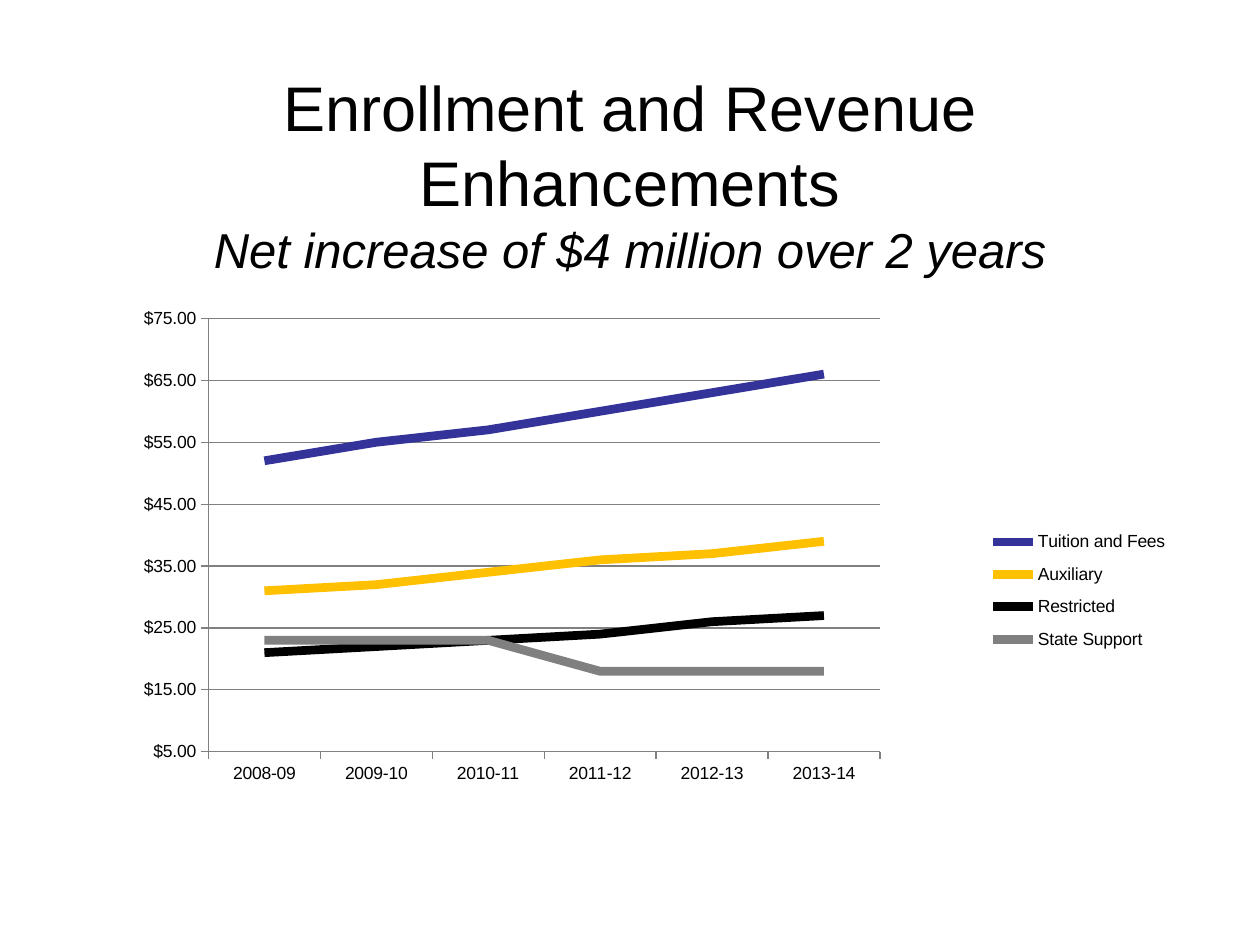
from lxml.etree import fromstring
from pptx import Presentation
from pptx.chart.data import CategoryChartData
from pptx.dml.color import RGBColor
from pptx.enum.chart import XL_CHART_TYPE, XL_LEGEND_POSITION, XL_MARKER_STYLE, XL_TICK_MARK
from pptx.enum.text import MSO_ANCHOR, PP_ALIGN
from pptx.oxml.ns import nsdecls
from pptx.util import Cm, Pt

# Content
TITLE = "Enrollment and Revenue Enhancements"
SUBTITLE = "Net increase of $4 million over 2 years"
YEARS = ["2008-09", "2009-10", "2010-11", "2011-12", "2012-13", "2013-14"]
REVENUE = [
    ("Tuition and Fees", "blue", (52, 55, 57, 60, 63, 66)),
    ("Auxiliary", "gold", (31, 32, 34, 36, 37, 39)),
    ("Restricted", "black", (21, 22, 23, 24, 26, 27)),
    ("State Support", "gray", (23, 23, 23, 18, 18, 18)),
]
COLORS = {"blue": "333399", "gold": "FFC000", "black": "000000", "gray": "808080"}
FONT = "Arial"
PLOT_AREA = (0.098, 0.056, 0.576, 0.699)
LEGEND_AREA = (0.74, 0.38, 0.21, 0.23)


def color(name):
    return RGBColor.from_string(COLORS[name])


def add_run(p, text, size, italic=False):
    r = p.add_run()
    r.text = text
    r.font.name, r.font.size, r.font.italic = FONT, Pt(size), italic
    r.font.color.rgb = color("black")


def layout(area, inner=False):
    target = '<c:layoutTarget val="inner"/>' if inner else ""
    modes = '<c:xMode val="edge"/><c:yMode val="edge"/>'
    sizes = "".join(f'<c:{k} val="{v}"/>' for k, v in zip("xywh", area))
    return fromstring(f'<c:layout {nsdecls("c")}><c:manualLayout>{target}{modes}{sizes}'
                      "</c:manualLayout></c:layout>")


prs = Presentation()
prs.slide_width, prs.slide_height = Cm(25.4), Cm(19.05)
s = prs.slides.add_slide(prs.slide_layouts[6])

# Title
tf = s.shapes.add_textbox(Cm(1.9), Cm(2.75), Cm(21.6), Cm(1.48)).text_frame
tf.word_wrap = True
tf.vertical_anchor = MSO_ANCHOR.MIDDLE
p = tf.paragraphs[0]
p.alignment = PP_ALIGN.CENTER
add_run(p, TITLE, 36)
p.add_line_break()
add_run(p, SUBTITLE, 28, italic=True)

# Line chart
data = CategoryChartData(number_format='"$"#,##0.00')
data.categories = YEARS
for name, _, values in REVENUE:
    data.add_series(name, values)
chart = s.shapes.add_chart(XL_CHART_TYPE.LINE, Cm(1.9), Cm(5.72), Cm(23.5), Cm(12.5), data).chart
chart.has_title = False
chart.font.name, chart.font.size = FONT, Pt(10)
chart.font.color.rgb = color("black")

plot = chart.plots[0]
plot.vary_by_categories = False
for series, (_, key, _) in zip(plot.series, REVENUE):
    series.smooth = False
    series.marker.style = XL_MARKER_STYLE.NONE
    series.format.line.width = Pt(5)
    series.format.line.color.rgb = color(key)

# Axes
years, dollars = chart.category_axis, chart.value_axis
dollars.minimum_scale, dollars.maximum_scale, dollars.major_unit = 5, 75, 10
dollars.tick_labels.number_format = '"$"#,##0.00'
dollars.tick_labels.number_format_is_linked = False
dollars.has_major_gridlines = True
for axis in (years, dollars):
    axis.major_tick_mark = XL_TICK_MARK.OUTSIDE
    axis.minor_tick_mark = XL_TICK_MARK.NONE
for part in (years, dollars, dollars.major_gridlines):
    part.format.line.width = Pt(0.75)
    part.format.line.color.rgb = color("gray")

# Legend and placement
chart.has_legend = True
legend = chart.legend
legend.position = XL_LEGEND_POSITION.RIGHT
legend.include_in_layout = False
plot_area = chart._chartSpace.chart.plotArea
for element, area, inner in ((plot_area, PLOT_AREA, True), (legend._element, LEGEND_AREA, False)):
    for old in element.xpath("c:layout"):
        element.remove(old)
    element.insert(0 if inner else 1, layout(area, inner))

prs.save("out.pptx")
